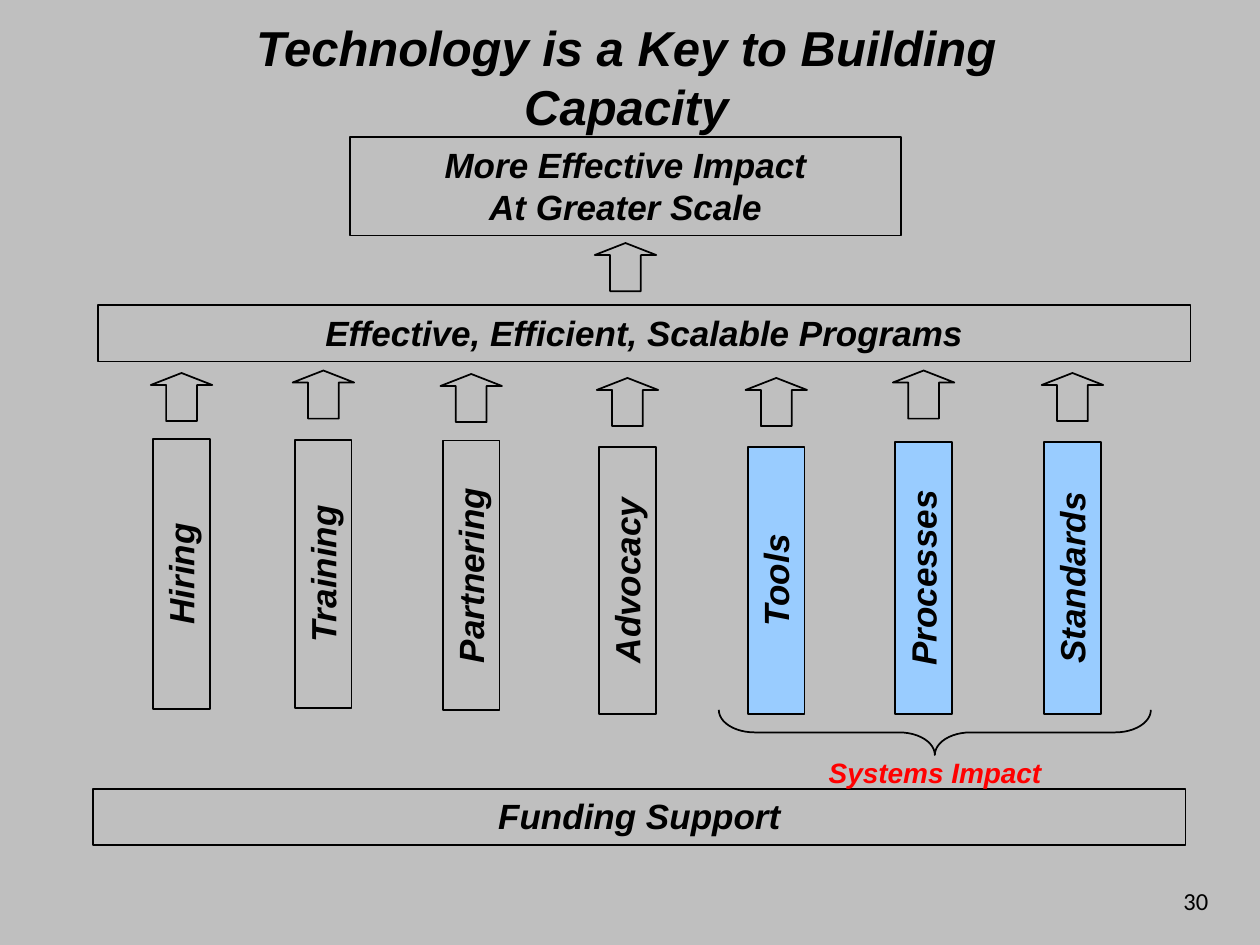
from dataclasses import dataclass
from typing import Optional

from pptx import Presentation
from pptx.dml.color import RGBColor as Rgb
from pptx.enum.shapes import MSO_SHAPE as Geo
from pptx.enum.text import MSO_ANCHOR as Anchor, MSO_AUTO_SIZE as Fit, PP_ALIGN as Align
from pptx.util import Cm, Pt

HUES = {"back": "BFBFBF", "ink": "000000", "system": "99CCFF", "alert": "FF0000"}
BOLD = {"name": "Arial", "size": Pt(20), "bold": True, "italic": True}
TITLE = {**BOLD, "size": Pt(28)}
LABEL = {**BOLD, "size": Pt(16)}
PLAIN = {"name": "Calibri", "size": Pt(14)}
THICK = 1.14
ARROW_W, ARROW_H = 1.24, 0.97


@dataclass
class Area:
    left: float
    top: float
    width: float
    height: float

    def cm(self) -> tuple:
        return Cm(self.left), Cm(self.top), Cm(self.width), Cm(self.height)


@dataclass
class Bar:
    text: str
    area: Area


@dataclass
class Pillar:
    text: str
    mid_x: float
    mid_y: float
    length: float
    tip: float
    fill: Optional[str] = None


BARS = [
    Bar("More Effective Impact\nAt Greater Scale", Area(7.06, 2.77, 11.1, 1.98)),
    Bar("Effective, Efficient, Scalable Programs", Area(1.98, 6.15, 22.02, THICK)),
    Bar("Funding Support", Area(1.88, 15.9, 22.02, THICK)),
]
PILLARS = [
    Pillar("Hiring", 3.66, 11.57, 5.44, 7.52),
    Pillar("Training", 6.52, 11.57, 5.41, 7.47),
    Pillar("Partnering", 9.5, 11.6, 5.44, 7.54),
    Pillar("Advocacy", 12.65, 11.7, 5.38, 7.62),
    Pillar("Tools", 15.65, 11.7, 5.38, 7.62, "system"),
    Pillar("Processes", 18.62, 11.65, 5.49, 7.47, "system"),
    Pillar("Standards", 21.62, 11.65, 5.49, 7.52, "system"),
]


def write(shape, text: str, style: dict, hue: str = "ink", align=Align.CENTER,
          anchor=Anchor.TOP, fit=Fit.SHAPE_TO_FIT_TEXT) -> None:
    frame = shape.text_frame
    frame.text = text
    frame.word_wrap = True
    frame.auto_size = fit
    frame.vertical_anchor = anchor
    for para in frame.paragraphs:
        para.alignment = align
        for run in para.runs:
            for key, value in style.items():
                setattr(run.font, key, value)
            run.font.color.rgb = Rgb.from_string(HUES[hue])


def draw(slide, kind, area: Area, fill: Optional[str] = None, turn: int = 0):
    """Add an outlined preset shape, hollow unless a fill is named."""
    shape = slide.shapes.add_shape(kind, *area.cm())
    shape.shadow.inherit = False
    shape.rotation = turn
    if fill:
        shape.fill.solid()
        shape.fill.fore_color.rgb = Rgb.from_string(HUES[fill])
    else:
        shape.fill.background()
    shape.line.color.rgb = Rgb.from_string(HUES["ink"])
    shape.line.width = Pt(1)
    return shape


def draw_arrow(slide, mid_x: float, tip: float) -> None:
    arrow = draw(slide, Geo.UP_ARROW, Area(mid_x - ARROW_W / 2, tip, ARROW_W, ARROW_H))
    arrow.adjustments[0] = 0.5
    arrow.adjustments[1] = 0.25


def draw_pillar(slide, pillar: Pillar) -> None:
    area = Area(pillar.mid_x - pillar.length / 2, pillar.mid_y - THICK / 2,
                pillar.length, THICK)
    write(draw(slide, Geo.RECTANGLE, area, pillar.fill, 270), pillar.text, BOLD)
    draw_arrow(slide, pillar.mid_x, pillar.tip)


def main() -> None:
    deck = Presentation()
    deck.slide_width, deck.slide_height = Cm(25.4), Cm(19.05)
    slide = deck.slides.add_slide(deck.slide_layouts[6])
    slide.background.fill.solid()
    slide.background.fill.fore_color.rgb = Rgb.from_string(HUES["back"])

    title = slide.shapes.add_textbox(*Area(3.1, -0.05, 19.05, 3.18).cm())
    write(title, "Technology is a Key to Building Capacity", TITLE,
          anchor=Anchor.MIDDLE, fit=Fit.NONE)
    number = slide.shapes.add_textbox(*Area(18.69, 17.73, 5.92, 1.32).cm())
    write(number, "30", PLAIN, align=Align.RIGHT, fit=Fit.NONE)

    for bar in BARS:
        write(draw(slide, Geo.RECTANGLE, bar.area), bar.text, BOLD)
    draw_arrow(slide, 12.61, 4.9)
    for pillar in PILLARS:
        draw_pillar(slide, pillar)

    brace = draw(slide, Geo.RIGHT_BRACE, Area(18.39, 10.41, 0.91, 8.71), turn=90)
    brace.adjustments[0] = 0.79
    brace.adjustments[1] = 0.5
    label = slide.shapes.add_textbox(*Area(16.31, 15.11, 5.08, 0.94).cm())
    write(label, "Systems Impact", LABEL, "alert")

    deck.save("out.pptx")


if __name__ == "__main__":
    main()
